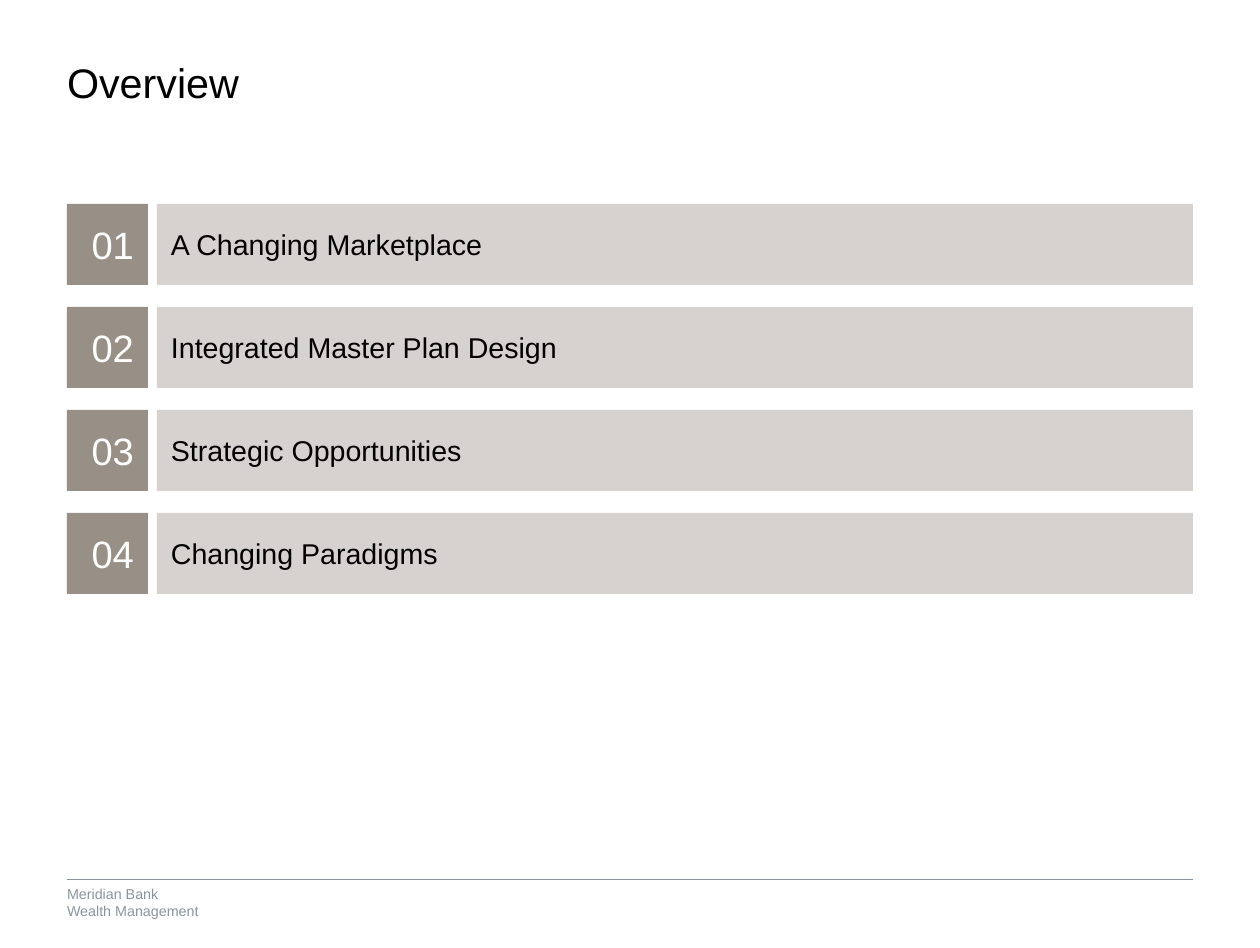
from pptx import Presentation
from pptx.dml.color import RGBColor
from pptx.enum.shapes import MSO_CONNECTOR, MSO_SHAPE
from pptx.enum.text import MSO_ANCHOR, PP_ALIGN
from pptx.oxml.ns import qn
from pptx.util import Emu, Pt

EMU_PER_PX = 8000
FONT = "Arial"
BLACK = RGBColor(0x00, 0x00, 0x00)
WHITE = RGBColor(0xFF, 0xFF, 0xFF)
TAUPE = RGBColor(0x98, 0x8F, 0x86)
SAND = RGBColor(0xD6, 0xD2, 0xCF)
SLATE = RGBColor(0x89, 0x96, 0xA0)

LEFT, RIGHT = 67, 1193
FIRST_ROW_TOP, ROW_PITCH, ROW_HEIGHT = 204, 103, 81
TOPIC_LEFT = 157
ROW_INSETS = (14, 9, 14, 9)
TOPICS = [
    "A Changing Marketplace",
    "Integrated Master Plan Design",
    "Strategic Opportunities",
    "Changing Paradigms",
]


def px(length):
    return Emu(length * EMU_PER_PX)


def write_text(box, text, *, size, color, insets, align=PP_ALIGN.LEFT,
               anchor=MSO_ANCHOR.TOP, wrap=True, line_spacing=None):
    """Fill a box with text, one paragraph a line; insets run left, top, right, bottom."""
    frame = box.text_frame
    frame.word_wrap = wrap
    frame.vertical_anchor = anchor
    (frame.margin_left, frame.margin_top,
     frame.margin_right, frame.margin_bottom) = map(px, insets)
    frame.text = text
    for para in frame.paragraphs:
        para.alignment = align
        para.line_spacing = line_spacing
        for span in para.runs:
            span.font.name = FONT
            span.font.size = Pt(size)
            span.font.color.rgb = color


def add_text(page, left, top, width, height, text, **text_format):
    box = page.shapes.add_textbox(px(left), px(top), px(width), px(height))
    write_text(box, text, **text_format)


def add_block(page, left, top, width, height, fill, text, **text_format):
    block = page.shapes.add_shape(
        MSO_SHAPE.RECTANGLE, px(left), px(top), px(width), px(height))
    block.shadow.inherit = False
    block.fill.solid()
    block.fill.fore_color.rgb = fill
    block.line.fill.background()
    write_text(block, text, insets=ROW_INSETS, anchor=MSO_ANCHOR.MIDDLE, **text_format)


def add_rule(page, left, right, top):
    rule = page.shapes.add_connector(
        MSO_CONNECTOR.STRAIGHT, px(left), px(top), px(right), px(top))
    rule.line.color.rgb = SLATE
    rule.line.width = Pt(0.5)
    properties = rule._element.spPr
    properties.append(properties.makeelement(qn("a:effectLst"), {}))


def add_agenda_row(page, index, topic):
    top = FIRST_ROW_TOP + index * ROW_PITCH
    add_block(page, LEFT, top, ROW_HEIGHT, ROW_HEIGHT, TAUPE, f"{index + 1:02}",
              size=24, color=WHITE, align=PP_ALIGN.RIGHT)
    add_block(page, TOPIC_LEFT, top, RIGHT - TOPIC_LEFT, ROW_HEIGHT, SAND, topic,
              size=18, color=BLACK)


def main():
    deck = Presentation()
    deck.slide_width, deck.slide_height = px(1260), px(948)
    page = deck.slides.add_slide(deck.slide_layouts[6])

    add_text(page, 0, 880, 201, 40, "Meridian Bank\nWealth Management",
             size=9, color=SLATE, insets=(LEFT, 5, 0, 0), wrap=False)
    add_rule(page, LEFT, RIGHT, 879)
    add_text(page, LEFT, 63, 1057, 95, "Overview",
             size=26, color=BLACK, insets=(0, 0, 67, 0), line_spacing=0.9)
    for index, topic in enumerate(TOPICS):
        add_agenda_row(page, index, topic)

    deck.save("out.pptx")


if __name__ == "__main__":
    main()
